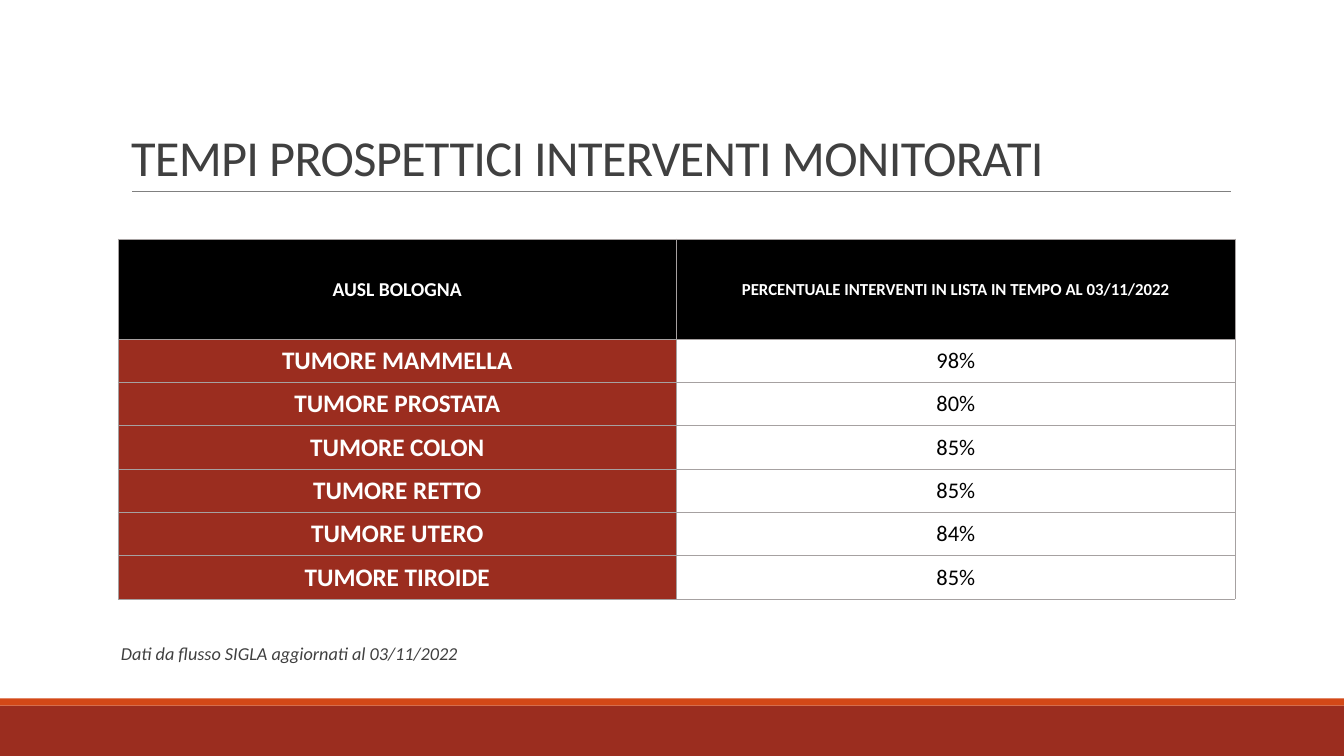
from lxml.etree import SubElement
from pptx import Presentation
from pptx.dml.color import RGBColor
from pptx.enum.shapes import MSO_CONNECTOR, MSO_SHAPE
from pptx.enum.text import MSO_ANCHOR, MSO_AUTO_SIZE, PP_ALIGN
from pptx.oxml.ns import qn
from pptx.util import Inches, Pt

TITLE = "TEMPI PROSPETTICI INTERVENTI MONITORATI"
NOTE = "Dati da flusso SIGLA aggiornati al 03/11/2022"
HEADER = ("AUSL BOLOGNA", "PERCENTUALE INTERVENTI IN LISTA IN TEMPO AL 03/11/2022")
RATES = [
    ("TUMORE MAMMELLA", "98%"),
    ("TUMORE PROSTATA", "80%"),
    ("TUMORE COLON", "85%"),
    ("TUMORE RETTO", "85%"),
    ("TUMORE UTERO", "84%"),
    ("TUMORE TIROIDE", "85%"),
]
BANDS = [(7, 0.5, "9B2D1F"), (6.93, 0.07, "D34817")]

BLACK, WHITE, RED, GREY = "000000", "FFFFFF", "9B2D1F", "404040"
HEADER_STYLES = [
    {"size": 14, "bold": True, "color": WHITE, "fill": BLACK},
    {"size": 12, "bold": True, "color": WHITE, "fill": BLACK},
]
RATE_STYLES = [
    {"size": 18, "bold": True, "color": WHITE, "fill": RED},
    {"size": 16, "bold": False, "color": BLACK, "fill": None},
]
SLIDE_WIDTH, SLIDE_HEIGHT = 13.33, 7.5
HEADER_HEIGHT, RATE_HEIGHT, COLUMN_WIDTH = 0.99, 0.43, 5.54


def rgb(value):
    return RGBColor.from_string(value)


def assign(target, values):
    for name, value in values.items():
        setattr(target, name, value)


def box(left, top, width, height):
    return [Inches(value) for value in (left, top, width, height)]


def write(frame, text, size, color, align, bold=False, italic=False):
    paragraph = frame.paragraphs[0]
    paragraph.alignment = align
    run = paragraph.add_run()
    run.text = text
    assign(run.font, {"name": "Calibri", "size": Pt(size), "bold": bold, "italic": italic})
    run.font.color.rgb = rgb(color)
    return paragraph, run


def place(placeholder, position, anchor, side_margin):
    assign(placeholder, dict(zip(("left", "top", "width", "height"), position)))
    frame = placeholder.text_frame
    assign(frame, {
        "word_wrap": True, "auto_size": MSO_AUTO_SIZE.NONE, "vertical_anchor": anchor,
        "margin_left": Inches(side_margin), "margin_right": Inches(side_margin),
    })
    return frame


def add_borders(cell):
    properties = cell._tc.get_or_add_tcPr()
    for side in ("lnL", "lnR", "lnT", "lnB"):
        line = SubElement(properties, qn(f"a:{side}"), w=str(Pt(0.25)))
        fill = SubElement(line, qn("a:solidFill"))
        SubElement(fill, qn("a:srgbClr"), val="A6A1A1")


def fill_cell(cell, text, style):
    assign(cell, {
        "vertical_anchor": MSO_ANCHOR.MIDDLE, "margin_left": Inches(0.01),
        "margin_right": Inches(0.01), "margin_top": Inches(0.01), "margin_bottom": 0,
    })
    add_borders(cell)
    if style["fill"]:
        cell.fill.solid()
        cell.fill.fore_color.rgb = rgb(style["fill"])
    else:
        cell.fill.background()
    write(cell.text_frame, text, style["size"], style["color"], PP_ALIGN.CENTER, style["bold"])


def add_bands(slide):
    for top, height, color in BANDS:
        band = slide.shapes.add_shape(MSO_SHAPE.RECTANGLE, *box(0, top, SLIDE_WIDTH, height))
        band.shadow.inherit = False
        band.fill.solid()
        band.fill.fore_color.rgb = rgb(color)
        band.line.fill.background()


def add_rule(slide):
    rule = slide.shapes.add_connector(MSO_CONNECTOR.STRAIGHT, *box(1.31, 1.9, 12.21, 1.9))
    rule.line.color.rgb = rgb("808080")
    rule.line.width = Pt(0.5)
    SubElement(rule._element.spPr, qn("a:effectLst"))


def add_texts(slide):
    title_frame = place(slide.shapes.title, box(1.2, 0.31, 11, 1.59), MSO_ANCHOR.BOTTOM, 0.1)
    paragraph, run = write(title_frame, TITLE, 36, GREY, PP_ALIGN.LEFT)
    paragraph.line_spacing = 0.85
    run.font._element.set("spc", "-50")

    note_frame = place(slide.placeholders[1], box(1.2, 6.24, 11, 0.5), MSO_ANCHOR.MIDDLE, 0)
    paragraph, run = write(note_frame, NOTE, 13, GREY, PP_ALIGN.JUSTIFY, italic=True)
    assign(paragraph, {"line_spacing": 0.9, "space_before": Pt(0), "space_after": Pt(0)})
    properties = paragraph._p.get_or_add_pPr()
    properties.set("marL", "0")
    properties.set("indent", "0")
    SubElement(properties, qn("a:buNone"))


def add_rates(slide):
    rows = [(HEADER, HEADER_STYLES)] + [(rate, RATE_STYLES) for rate in RATES]
    height = HEADER_HEIGHT + RATE_HEIGHT * len(RATES)
    position = box(1.17, 2.37, COLUMN_WIDTH * len(HEADER), height)
    table = slide.shapes.add_table(len(rows), len(HEADER), *position).table
    assign(table, {"first_row": False, "horz_banding": False})
    for column in table.columns:
        column.width = Inches(COLUMN_WIDTH)
    for row_index, (texts, styles) in enumerate(rows):
        table.rows[row_index].height = Inches(RATE_HEIGHT if row_index else HEADER_HEIGHT)
        for column_index, (text, style) in enumerate(zip(texts, styles)):
            fill_cell(table.cell(row_index, column_index), text, style)


def main():
    presentation = Presentation()
    assign(presentation, {
        "slide_width": Inches(SLIDE_WIDTH), "slide_height": Inches(SLIDE_HEIGHT),
    })
    slide = presentation.slides.add_slide(presentation.slide_layouts[1])
    add_bands(slide)
    add_rule(slide)
    add_texts(slide)
    add_rates(slide)
    presentation.save("out.pptx")


if __name__ == "__main__":
    main()
